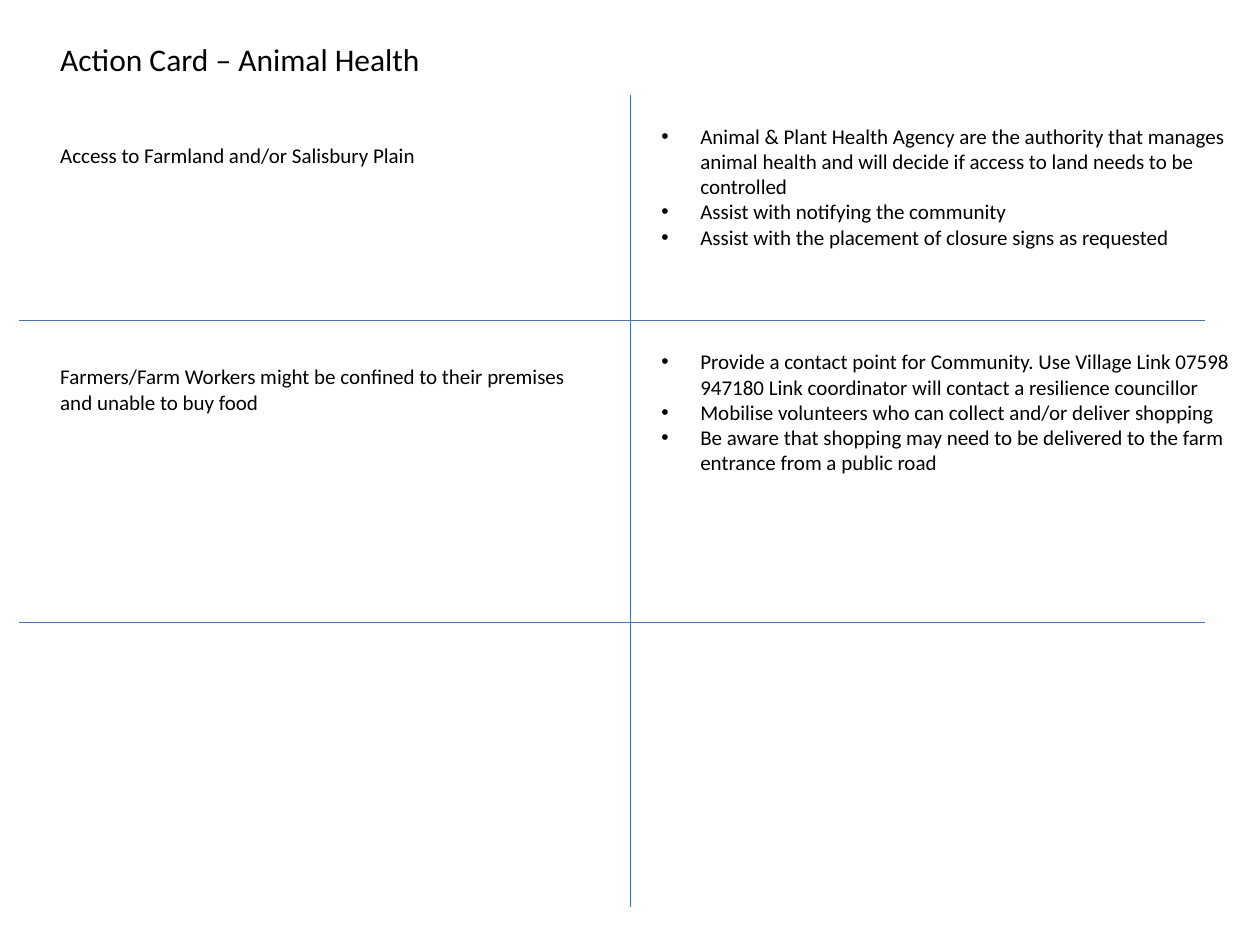
from dataclasses import dataclass

from lxml.etree import SubElement
from pptx import Presentation
from pptx.dml.color import RGBColor
from pptx.enum.shapes import MSO_CONNECTOR as Connector
from pptx.enum.text import MSO_AUTO_SIZE as AutoSize
from pptx.oxml.ns import qn
from pptx.slide import Slide
from pptx.util import Inches, Pt

FONT = "Calibri"
INK = "000000"
RULE = "4472C4"
LEFT_COLUMN = 0.38
RIGHT_COLUMN = 5.15
INDENT = 0.31


@dataclass(frozen=True)
class TextBlock:
    left: float
    top: float
    width: float
    height: float
    lines: tuple[str, ...]
    size: int = 12
    bulleted: bool = False


@dataclass(frozen=True)
class Divider:
    start: tuple[float, float]
    end: tuple[float, float]


DIVIDERS = (
    Divider((5, 0.75), (5, 7.2)),
    *(Divider((0.15, y), (9.56, y)) for y in (2.54, 4.94)),
)

BLOCKS = (
    TextBlock(LEFT_COLUMN, 0.27, 6.37, 0.4, ("Action Card – Animal Health",), size=18),
    TextBlock(LEFT_COLUMN, 1.08, 4.47, 0.3, ("Access to Farmland and/or Salisbury Plain",)),
    TextBlock(RIGHT_COLUMN, 0.93, 4.85, 1.11, (
        "Animal & Plant Health Agency are the authority that manages animal health "
        "and will decide if access to land needs to be controlled",
        "Assist with notifying the community",
        "Assist with the placement of closure signs as requested",
    ), bulleted=True),
    TextBlock(LEFT_COLUMN, 2.84, 4.47, 0.5, (
        "Farmers/Farm Workers might be confined to their premises and unable to buy food",
    )),
    TextBlock(RIGHT_COLUMN, 2.72, 4.82, 1.11, (
        "Provide a contact point for Community. Use Village Link 07598 947180 "
        "Link coordinator will contact a resilience councillor",
        "Mobilise volunteers who can collect and/or deliver shopping",
        "Be aware that shopping may need to be delivered to the farm entrance "
        "from a public road",
    ), bulleted=True),
)


def colour(value: str) -> RGBColor:
    return RGBColor.from_string(value)


def add_bullet(para) -> None:
    properties = para._p.get_or_add_pPr()
    properties.set("marL", str(Inches(INDENT)))
    properties.set("indent", str(-Inches(INDENT)))
    SubElement(properties, qn("a:buFont"), typeface="Arial")
    SubElement(properties, qn("a:buChar"), char="•")


def add_text(page: Slide, block: TextBlock) -> None:
    box = page.shapes.add_textbox(
        Inches(block.left), Inches(block.top), Inches(block.width), Inches(block.height)
    )
    frame = box.text_frame
    frame.word_wrap = True
    frame.auto_size = AutoSize.SHAPE_TO_FIT_TEXT
    for index, line in enumerate(block.lines):
        para = frame.add_paragraph() if index else frame.paragraphs[0]
        if block.bulleted:
            add_bullet(para)
        span = para.add_run()
        span.text = line
        span.font.name = FONT
        span.font.size = Pt(block.size)
        span.font.color.rgb = colour(INK)


def add_divider(page: Slide, divider: Divider) -> None:
    points = (Inches(value) for value in divider.start + divider.end)
    connector = page.shapes.add_connector(Connector.STRAIGHT, *points)
    connector.line.color.rgb = colour(RULE)
    connector.line.width = Pt(0.5)
    SubElement(connector._element.spPr, qn("a:effectLst"))


def main() -> None:
    """Build the animal health action card."""
    deck = Presentation()
    deck.slide_width = Inches(10)
    deck.slide_height = Inches(7.5)
    page = deck.slides.add_slide(deck.slide_layouts[6])
    for divider in DIVIDERS:
        add_divider(page, divider)
    for block in BLOCKS:
        add_text(page, block)
    deck.save("out.pptx")


if __name__ == "__main__":
    main()
